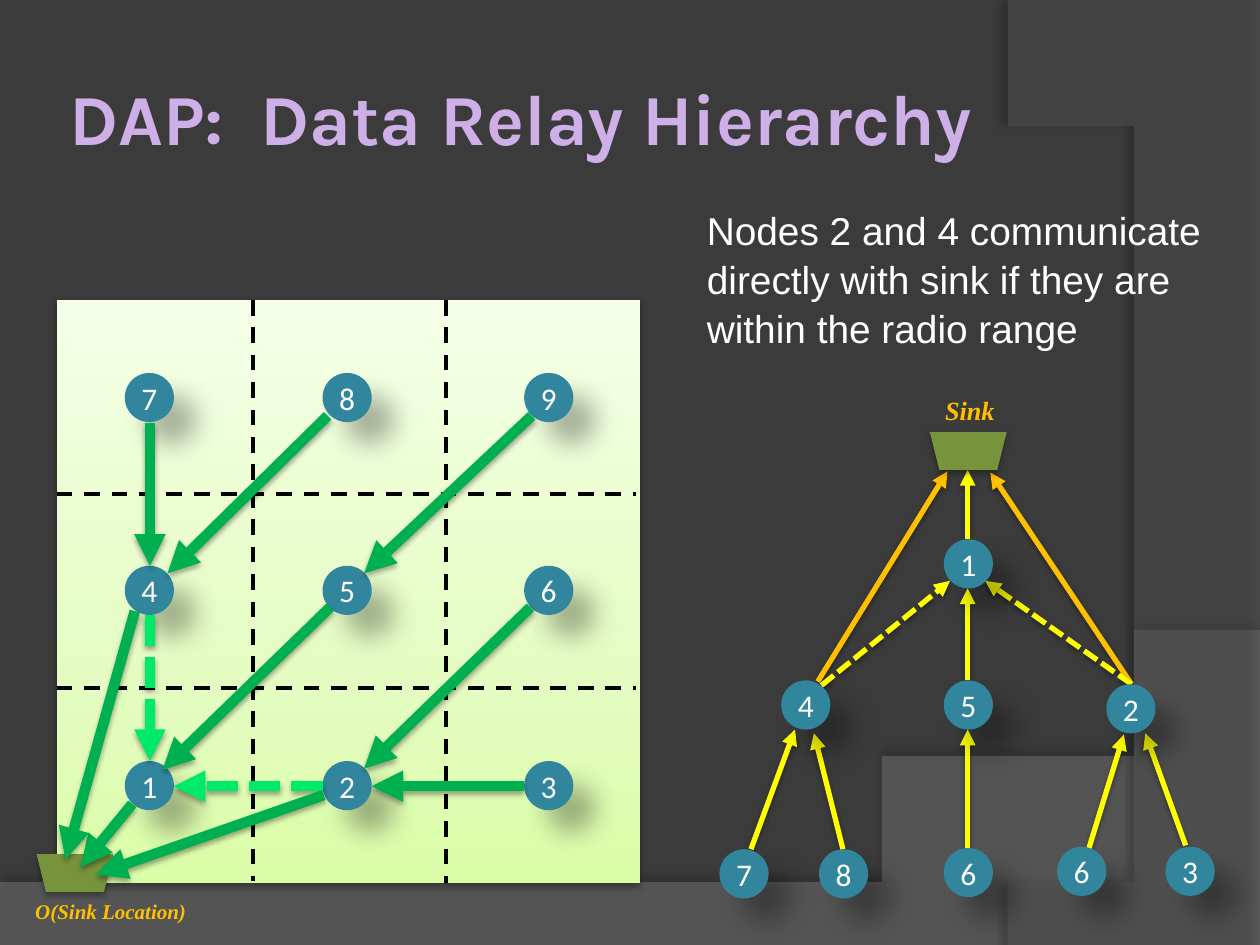
import copy
from typing import Any, NamedTuple, Optional

import pptx
import pptx.util
from lxml import etree
from pptx.dml.color import RGBColor
from pptx.enum.dml import MSO_LINE
from pptx.enum.shapes import MSO_CONNECTOR, MSO_SHAPE
from pptx.enum.text import MSO_ANCHOR, PP_ALIGN
from pptx.oxml.ns import qn
from pptx.util import Inches, Pt

BACKDROP = RGBColor(0x3B, 0x3B, 0x3B)
LOWER_SWOOSH = RGBColor(0x7F, 0x7F, 0x7F)
RIGHT_SWOOSH = RGBColor(0x5E, 0x5E, 0x5E)
LILAC = RGBColor(0xCF, 0xAF, 0xE7)
BLACK = RGBColor(0, 0, 0)
WHITE = RGBColor(0xFF, 0xFF, 0xFF)
TEAL = RGBColor(0x31, 0x85, 0x9C)
OLIVE = RGBColor(0x77, 0x93, 0x3C)
GREEN = RGBColor(0x00, 0xB0, 0x50)
BRIGHT_GREEN = RGBColor(0x00, 0xEA, 0x6A)
AMBER = RGBColor(0xFF, 0xC0, 0x00)
YELLOW = RGBColor(0xFF, 0xFF, 0x00)
FIELD_STOPS = ((0, RGBColor(0xDA, 0xFD, 0xA7)), (0.35, RGBColor(0xE4, 0xFC, 0xC2)),
               (1, RGBColor(0xF5, 0xFF, 0xE7)))
NODE_SIZE = 0.39

Point = tuple[float, float]


class Shadow(NamedTuple):
    opacity: int
    blur: float
    distance: float
    angle: int


class Node(NamedTuple):
    label: str
    left: float
    top: float


class Link(NamedTuple):
    start: Point
    end: Point


class LinkStyle(NamedTuple):
    color: RGBColor
    width: float
    dash: Optional[MSO_LINE] = None
    arrow: bool = True
    shadow: Optional[Shadow] = None


class Label(NamedTuple):
    text: str
    left: float
    top: float
    width: float
    height: float
    wrap: bool
    inset: float
    font: dict[str, Any]
    color: RGBColor


NODE_SHADOW = Shadow(30, 15, 18, 45)
FLAT_SHADOW = Shadow(32, 3.5, 2.2, 90)
FIELD_SHADOW = Shadow(35, 3.1, 1.8, 90)
TREE_SHADOW = Shadow(38, 3.1, 1.6, 90)
GRID_LINE = LinkStyle(BLACK, 2.25, MSO_LINE.DASH, arrow=False)
RELAY = LinkStyle(GREEN, 6, shadow=FIELD_SHADOW)
OPTIONAL_RELAY = LinkStyle(BRIGHT_GREEN, 6, MSO_LINE.SQUARE_DOT, shadow=FIELD_SHADOW)
DIRECT_BRANCH = LinkStyle(AMBER, 3, shadow=TREE_SHADOW)
BRANCH = LinkStyle(YELLOW, 3, shadow=TREE_SHADOW)
OPTIONAL_BRANCH = LinkStyle(YELLOW, 3, MSO_LINE.SQUARE_DOT, shadow=TREE_SHADOW)

COLUMNS = (0.99, 2.56, 4.16)
ROWS = (6.04, 4.49, 2.96)
FIELD_NODES = [Node(str(3 * row + column + 1), left, top)
               for row, top in enumerate(ROWS) for column, left in enumerate(COLUMNS)]
TREE_NODES = [Node("1", 7.49, 4.28), Node("5", 7.49, 5.4), Node("4", 6.2, 5.4),
              Node("2", 8.78, 5.43), Node("7", 5.71, 6.74), Node("8", 6.5, 6.74),
              Node("6", 7.49, 6.73), Node("6", 8.39, 6.72), Node("3", 9.25, 6.72)]
GRID_LINKS = [Link((2.01, 2.38), (2.01, 6.99)), Link((3.54, 2.38), (3.54, 7.01)),
              Link((0.45, 5.46), (5.05, 5.46)), Link((0.45, 3.92), (5.05, 3.92))]
RELAYS = [Link((2.6, 3.3), (1.33, 4.55)), Link((4.21, 4.82), (2.89, 6.1)),
          Link((2.62, 4.82), (1.29, 6.11)), Link((1.19, 3.36), (1.19, 4.49)),
          Link((4.16, 6.24), (2.95, 6.24)), Link((4.22, 3.3), (2.89, 4.55))]
DIRECT_BRANCHES = [Link((8.98, 5.43), (7.86, 3.75)), Link((6.49, 5.41), (7.52, 3.74))]
BRANCHES = [Link((7.68, 4.28), (7.68, 3.73)), Link((7.68, 5.4), (7.68, 4.67)),
            Link((7.68, 6.73), (7.68, 5.79)), Link((6.69, 6.74), (6.46, 5.82)),
            Link((5.96, 6.74), (6.31, 5.79)), Link((9.41, 6.71), (9.09, 5.82)),
            Link((8.64, 6.74), (8.92, 5.83))]
OPTIONAL_RELAYS = [Link((2.56, 6.24), (1.38, 6.24)), Link((1.19, 4.88), (1.19, 6.04))]
OPTIONAL_BRANCHES = [Link((6.52, 5.44), (7.54, 4.61)), Link((8.98, 5.43), (7.82, 4.61))]
SINK_RELAYS = [Link((1.05, 6.38), (0.64, 6.88)), Link((2.57, 6.31), (0.76, 6.94)),
               Link((1.07, 4.85), (0.52, 6.82))]

SERIF = {"name": "Times New Roman", "bold": True, "italic": True}
LABELS = [
    Label("O(Sink Location)", 0.2, 7.09, 1.37, 0.28, False, 0.08, SERIF | {"size": Pt(12)}, AMBER),
    Label("Sink", 7.43, 3.09, 0.55, 0.33, False, 0.07, SERIF | {"size": Pt(15)}, AMBER),
    Label("Nodes 2 and 4 communicate directly with sink if they are within the radio range",
          5.47, 1.58, 4.33, 1.27, True, 0.14, {"name": "Arial", "size": Pt(22.2)}, WHITE),
]


def apply(target: Any, values: dict[str, Any]) -> None:
    for name, value in values.items():
        setattr(target, name, value)


def write(frame: Any, text: str, font: dict[str, Any], color: RGBColor,
          alignment: PP_ALIGN = PP_ALIGN.LEFT) -> None:
    para = frame.paragraphs[0]
    para.alignment = alignment
    span = para.add_run()
    span.text = text
    apply(span.font, font)
    span.font.color.rgb = color


def add_shadow(shape: Any, shadow: Optional[Shadow]) -> None:
    effects = etree.SubElement(shape.element.spPr, qn("a:effectLst"))
    if shadow:
        outer = etree.SubElement(effects, qn("a:outerShdw"), blurRad=str(Pt(shadow.blur)),
                                 dist=str(Pt(shadow.distance)), dir=str(shadow.angle * 60000),
                                 rotWithShape="0")
        tint = etree.SubElement(outer, qn("a:srgbClr"), val=str(BLACK))
        etree.SubElement(tint, qn("a:alpha"), val=str(shadow.opacity * 1000))


def paint(shape: Any, color: RGBColor, shadow: Shadow) -> None:
    shape.fill.solid()
    shape.fill.fore_color.rgb = color
    shape.line.fill.background()
    add_shadow(shape, shadow)


def curve(start: Point, first: Point, second: Point, end: Point, steps: int = 40) -> list[Point]:
    points = []
    for step in range(1, steps + 1):
        t = step / steps
        weights = ((1 - t) ** 3, 3 * t * (1 - t) ** 2, 3 * t * t * (1 - t), t ** 3)
        x, y = (sum(weight * value for weight, value in zip(weights, axis))
                for axis in zip(start, first, second, end))
        points.append((x, y))
    return points


def add_swoosh(page: Any, points: list[Point], color: RGBColor, opacity: int,
               shadow: Shadow) -> None:
    builder = page.shapes.build_freeform(*points[0], scale=Inches(1))
    builder.add_line_segments(points[1:], close=True)
    swoosh = builder.convert_to_shape()
    paint(swoosh, color, shadow)
    tint = swoosh.element.spPr.find(qn("a:solidFill"))[0]
    etree.SubElement(tint, qn("a:alpha"), val=str(opacity * 1000))


def add_field(page: Any) -> None:
    field = page.shapes.add_shape(MSO_SHAPE.RECTANGLE, *map(Inches, (0.45, 2.38, 4.63, 4.63)))
    field.fill.gradient()
    field.fill.gradient_angle = 90
    stops = field.element.spPr.find(qn("a:gradFill")).find(qn("a:gsLst"))
    stops.insert(1, copy.deepcopy(stops[0]))
    for stop, (position, color) in zip(field.fill.gradient_stops, FIELD_STOPS):
        stop.position = position
        stop.color.rgb = color
    field.line.fill.background()
    add_shadow(field, FLAT_SHADOW)


def add_node(page: Any, node: Node) -> None:
    circle = page.shapes.add_shape(MSO_SHAPE.FLOWCHART_CONNECTOR, Inches(node.left),
                                   Inches(node.top), Inches(NODE_SIZE), Inches(NODE_SIZE))
    paint(circle, TEAL, NODE_SHADOW)
    frame = circle.text_frame
    apply(frame, {"margin_left": Inches(0.08), "margin_right": Inches(0.08),
                  "margin_top": Inches(0.04), "margin_bottom": Inches(0.04),
                  "vertical_anchor": MSO_ANCHOR.MIDDLE, "word_wrap": False})
    write(frame, node.label, {"name": "Calibri", "size": Pt(18)}, WHITE, PP_ALIGN.CENTER)


def add_sink(page: Any, left: float, top: float) -> None:
    sink = page.shapes.add_shape(MSO_SHAPE.TRAPEZOID, *map(Inches, (left, top, 0.61, 0.3)))
    sink.element.spPr.find(qn("a:xfrm")).set("flipV", "1")
    paint(sink, OLIVE, FLAT_SHADOW)


def add_links(page: Any, links: list[Link], style: LinkStyle) -> None:
    for link in links:
        line = page.shapes.add_connector(MSO_CONNECTOR.STRAIGHT,
                                         *map(Inches, link.start + link.end))
        line.line.color.rgb = style.color
        line.line.width = Pt(style.width)
        if style.dash:
            line.line.dash_style = style.dash
        if style.arrow:
            etree.SubElement(line.element.spPr.find(qn("a:ln")), qn("a:tailEnd"), type="triangle")
        add_shadow(line, style.shadow)


def add_label(page: Any, label: Label) -> None:
    box = page.shapes.add_textbox(*map(Inches, label[1:5]))
    apply(box.text_frame, {"word_wrap": label.wrap, "margin_left": Inches(label.inset),
                           "margin_right": Inches(0.07), "margin_top": Inches(0.04),
                           "margin_bottom": Inches(0.04)})
    write(box.text_frame, label.text, label.font, label.color)
    if label.wrap:
        box.text_frame.paragraphs[0].line_spacing = 1.05


def main() -> None:
    deck = pptx.Presentation()
    apply(deck, {"slide_width": Inches(10), "slide_height": Inches(7.5)})
    page = deck.slides.add_slide(deck.slide_layouts[5])
    page.background.fill.solid()
    page.background.fill.fore_color.rgb = BACKDROP

    lower = curve((10, 5.2), (5.59, 7.29), (3.91, 7.19), (0, 7.05))
    add_swoosh(page, [(0, 7.5), (10, 7.5), (10, 5.2)] + lower, LOWER_SWOOSH, 45,
               Shadow(35, 4, 3.5, 270))
    right = curve((8.21, 7.5), (9.35, 6.19), (10.18, 3), (8, 0))
    add_swoosh(page, [(10, 0.02), (10, 7.5), (8.21, 7.5)] + right, RIGHT_SWOOSH, 40,
               Shadow(45, 4, 4, 180))

    title = page.shapes.title
    apply(title, {"left": Inches(0.5), "top": Inches(0.3),
                  "width": Inches(8.17), "height": Inches(1.25)})
    sides = ("margin_left", "margin_right", "margin_top", "margin_bottom")
    apply(title.text_frame, dict.fromkeys(sides, Inches(0.05))
          | {"vertical_anchor": MSO_ANCHOR.MIDDLE})
    write(title.text_frame, "DAP:  Data Relay Hierarchy",
          {"name": "Karla", "size": Pt(41), "bold": True}, LILAC)

    add_field(page)
    add_links(page, GRID_LINKS, GRID_LINE)
    for node in FIELD_NODES:
        add_node(page, node)
    add_sink(page, 0.29, 6.78)
    for links, style in ((RELAYS, RELAY), (DIRECT_BRANCHES, DIRECT_BRANCH), (BRANCHES, BRANCH),
                         (OPTIONAL_RELAYS, OPTIONAL_RELAY), (OPTIONAL_BRANCHES, OPTIONAL_BRANCH)):
        add_links(page, links, style)
    for node in TREE_NODES:
        add_node(page, node)
    add_sink(page, 7.38, 3.43)
    for label in LABELS:
        add_label(page, label)
    add_links(page, SINK_RELAYS, RELAY)
    deck.save("out.pptx")


if __name__ == "__main__":
    main()
